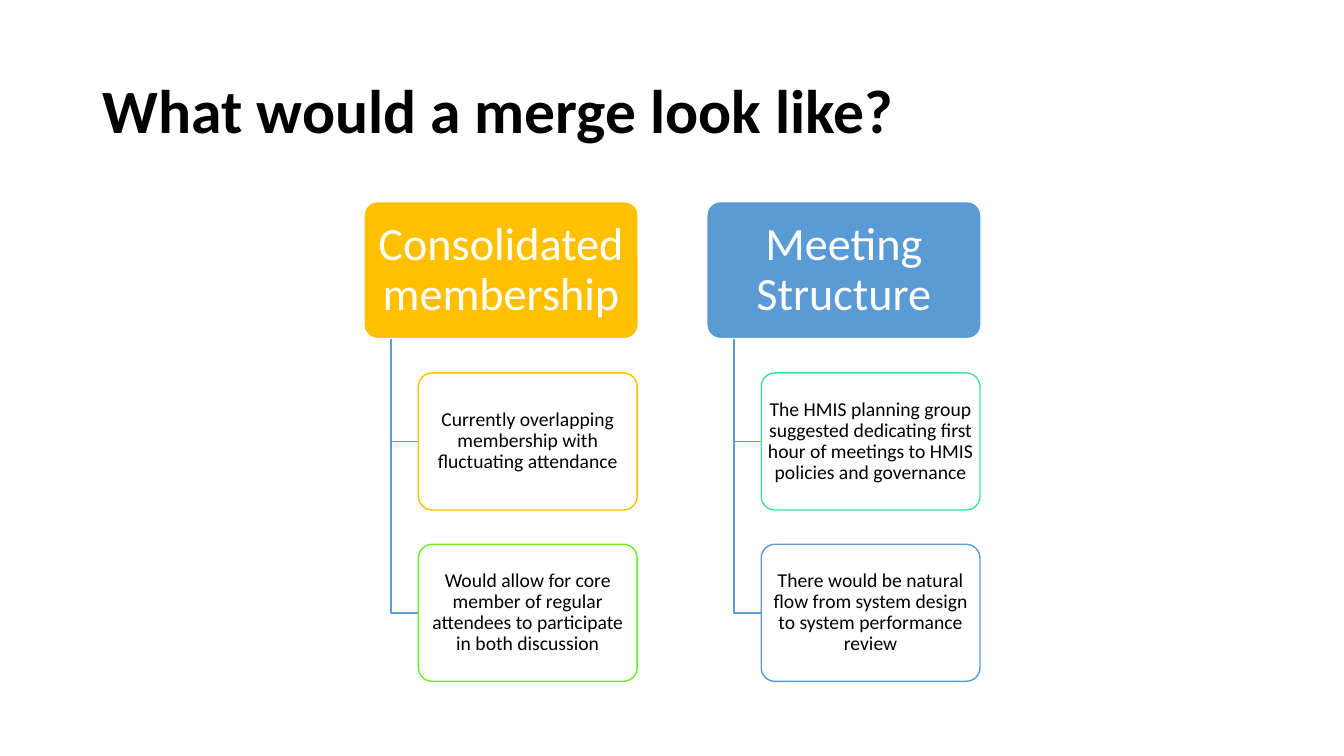
from dataclasses import dataclass

from lxml import etree
from pptx import Presentation
from pptx import util as u
from pptx.dml.color import RGBColor
from pptx.enum import shapes, text
from pptx.oxml.ns import qn

PX = 9144  # EMU in one px, 100 px to the inch


@dataclass(frozen=True)
class Theme:
    font: str = "Calibri"
    black: str = "000000"
    white: str = "FFFFFF"
    gold: str = "FFC000"
    lime: str = "67EF21"
    mint: str = "3FE19B"
    blue: str = "5B9BD5"
    title: int = 44
    head: int = 33
    body: int = 14


T = Theme()

# Head, head colour, then the items with their outline colours
TOPICS = [
    ("Consolidated membership", T.gold, [
        ("Currently overlapping membership with fluctuating attendance", T.gold),
        ("Would allow for core member of regular attendees to participate "
         "in both discussion", T.lime),
    ]),
    ("Meeting Structure", T.blue, [
        ("The HMIS planning group suggested dedicating first hour of meetings "
         "to HMIS policies and governance", T.mint),
        ("There would be natural flow from system design to system "
         "performance review", T.blue),
    ]),
]

# Grid of the tree, in px
LEFT, TOP, TALL = 361, 200, 136
COL, ROW = 340, 170
HEAD_W, ITEM_W = 272, 217
STEM, INDENT = 27, 54

# Text margins across and down, in px; round corners add about 4 more
HEAD_PAD, ITEM_PAD = (6, 5), (2, 2)


def px(*vals):
    return [u.Emu(v * PX) for v in vals]


def write(shape, words, size, color, align, pad, bold=False):
    frame = shape.text_frame
    frame.word_wrap = True
    frame.vertical_anchor = text.MSO_ANCHOR.MIDDLE
    frame.margin_left, frame.margin_top = px(*pad)
    frame.margin_right, frame.margin_bottom = px(*pad)
    para = frame.paragraphs[0]
    para.alignment = align
    para.line_spacing = 0.9
    run = para.add_run()
    run.text = words
    font = run.font
    font.name, font.size, font.bold = T.font, u.Pt(size), bold
    font.color.rgb = RGBColor.from_string(color)


def stroke(shape, color):
    shape.shadow.inherit = False
    shape.line.color.rgb = RGBColor.from_string(color)
    shape.line.width = u.Pt(1)


def card(slide, box, words, fill, line, size, color, pad):
    shape = slide.shapes.add_shape(
        shapes.MSO_SHAPE.ROUNDED_RECTANGLE, *px(*box))
    shape.adjustments[0] = 0.1
    shape.fill.solid()
    shape.fill.fore_color.rgb = RGBColor.from_string(fill)
    stroke(shape, line)
    write(shape, words, size, color, text.PP_ALIGN.CENTER, pad)
    return shape


def fade(shape, share):
    tone = shape.fill._xPr.find(qn("a:solidFill"))[0]
    etree.SubElement(tone, qn("a:alpha")).set("val", str(share * 1000))


def elbow(slide, x, y, end_x, end_y):
    pen = slide.shapes.build_freeform(x, y, scale=PX)
    pen.add_line_segments([(x, end_y), (end_x, end_y)], close=False)
    shape = pen.convert_to_shape()
    shape.fill.background()
    stroke(shape, T.blue)


def topic(slide, x, words, color, items):
    card(slide, (x, TOP, HEAD_W, TALL), words, color, T.white,
         T.head, T.white, HEAD_PAD)
    for row, (note, line) in enumerate(items, 1):
        y = TOP + row * ROW
        elbow(slide, x + STEM, TOP + TALL, x + INDENT, y + TALL // 2)
        item = card(slide, (x + INDENT, y, ITEM_W, TALL), note, T.white, line,
                    T.body, T.black, ITEM_PAD)
        fade(item, 90)


def main():
    deck = Presentation()
    deck.slide_width, deck.slide_height = px(1333, 750)
    slide = deck.slides.add_slide(deck.slide_layouts[6])

    # Title
    title = slide.shapes.add_textbox(*px(92, 40, 1150, 145))
    write(title, "What would a merge look like?", T.title, T.black,
          text.PP_ALIGN.LEFT, (10, 5), bold=True)

    # Topic trees
    for col, (words, color, items) in enumerate(TOPICS):
        topic(slide, LEFT + col * COL, words, color, items)

    deck.save("out.pptx")


if __name__ == "__main__":
    main()
